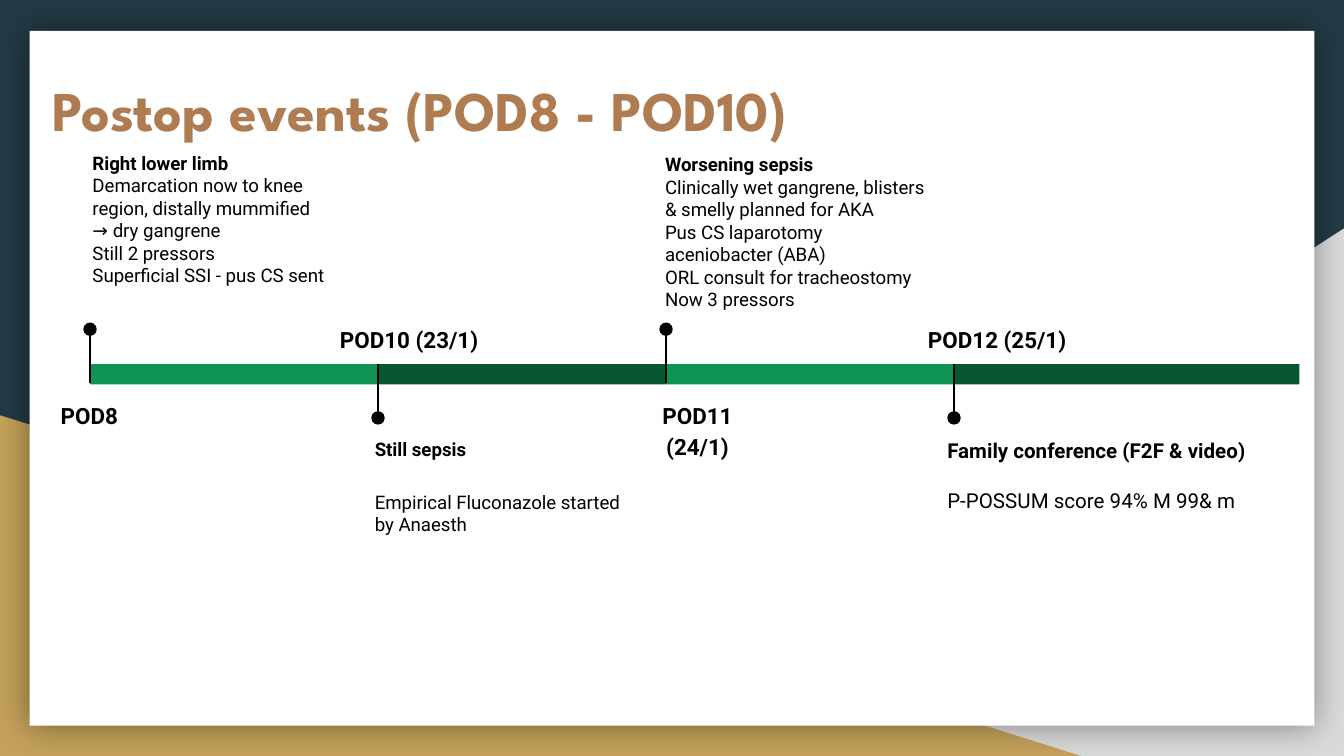
from lxml import etree
from pptx import Presentation
from pptx.dml.color import RGBColor
from pptx.enum.shapes import MSO_CONNECTOR, MSO_SHAPE
from pptx.enum.text import MSO_ANCHOR, MSO_AUTO_SIZE, PP_ALIGN
from pptx.oxml import parse_xml
from pptx.oxml.ns import nsdecls, qn
from pptx.util import Inches, Pt

COLORS = {
    "navy": "233A44", "grey": "D9D9D9", "gold": "C4A15A", "white": "FFFFFF",
    "title": "AF7B51", "green": "0E9453", "dark": "085631", "black": "000000",
}
START, STEP, BAR_TOP, BAR_H, DOT = 0.67, 2.143, 2.71, 0.15, 0.1
EVENTS = [
    {"label": "POD8", "label_box": (0.19, 2.86, 0.95, 0.41),
     "head": "Right lower limb", "box": (0.59, 1.03, 2.14, 1.27), "size": 10, "gap": 0,
     "body": "Demarcation now to knee region, distally mummified\n→ dry gangrene\n"
             "Still 2 pressors\nSuperficial SSI - pus CS sent"},
    {"label": "POD10 (23/1)", "label_box": (2.41, 2.3, 1.27, 0.41),
     "head": "Still sepsis", "box": (2.69, 3.16, 2.08, 1.03), "size": 10, "gap": 16,
     "body": "Empirical Fluconazole started by Anaesth"},
    {"label": "POD11 (24/1)", "label_box": (4.6, 2.86, 1.18, 0.41),
     "head": "Worsening sepsis", "box": (4.85, 1.04, 2.14, 1.82), "size": 10, "gap": 0,
     "body": "Clinically wet gangrene, blisters & smelly planned for AKA\n"
             "Pus CS laparotomy aceniobacter (ABA)\n"
             "ORL consult for tracheostomy\nNow 3 pressors"},
    {"label": "POD12 (25/1)", "label_box": (6.69, 2.3, 1.46, 0.41),
     "head": "Family conference (F2F & video)", "box": (6.95, 3.16, 2.46, 1.03),
     "size": 11, "gap": 13.5, "body": "P-POSSUM score 94% M 99& m"},
]


def rgb(name):
    """Return the named colour."""
    return RGBColor.from_string(COLORS[name])


def add_block(s, kind, box, color):
    """Add a filled shape without outline or shadow."""
    sp = s.shapes.add_shape(kind, *map(Inches, box))
    sp.shadow.inherit = False
    sp.fill.solid()
    sp.fill.fore_color.rgb = rgb(color)
    sp.line.fill.background()
    return sp


def style_frame(tf):
    """Give a text frame even insets, wrapping and a top anchor."""
    tf.word_wrap = True
    tf.auto_size = MSO_AUTO_SIZE.NONE
    tf.vertical_anchor = MSO_ANCHOR.TOP
    tf.margin_left = tf.margin_right = tf.margin_top = tf.margin_bottom = Inches(0.1)


def style_font(p, name, size, color, bold):
    """Set the font of a paragraph."""
    p.font.name, p.font.size, p.font.bold = name, Pt(size), bold
    p.font.color.rgb = rgb(color)


def add_text(s, box, size, head, body=None, gap=0):
    """Add a text box with a bold line and an optional plain paragraph."""
    tf = s.shapes.add_textbox(*map(Inches, box)).text_frame
    style_frame(tf)
    p = tf.paragraphs[0]
    p.text = head
    style_font(p, "Roboto", size, "black", True)
    if body:
        p = tf.add_paragraph()
        p.text = body
        p.space_before = Pt(gap)
        style_font(p, "Roboto", size, "black", False)
    return tf


def add_backdrop(s):
    """Draw the coloured corners and the white card with its soft shadow."""
    s.background.fill.solid()
    s.background.fill.fore_color.rgb = rgb("navy")
    corner = add_block(s, MSO_SHAPE.RIGHT_TRIANGLE, (3.92, 1.7, 6.08, 3.93), "grey")
    corner._element.spPr.find(qn("a:xfrm")).set("flipH", "1")
    add_block(s, MSO_SHAPE.RIGHT_TRIANGLE, (0, 3.09, 8.06, 2.54), "gold")
    card = add_block(s, MSO_SHAPE.RECTANGLE, (0.22, 0.23, 9.56, 5.17), "white")
    card._element.spPr.find(qn("a:effectLst")).append(parse_xml(
        f'<a:outerShdw {nsdecls("a")} blurRad="{Pt(18)}" dist="0" algn="ctr" rotWithShape="0">'
        f'<a:srgbClr val="{COLORS["black"]}"><a:alpha val="40000"/></a:srgbClr></a:outerShdw>'))


def add_title(s, text):
    """Place the title above the card and its events."""
    title = s.shapes.title
    title.left, title.top, title.width, title.height = map(Inches, (0.29, 0.46, 8.21, 1.04))
    tf = title.text_frame
    style_frame(tf)
    p = tf.paragraphs[0]
    p.text = text
    p.alignment = PP_ALIGN.LEFT
    p.line_spacing = 1.0
    p.space_before = Pt(0)
    style_font(p, "League Spartan", 30, "title", True)
    tree = s.shapes._spTree
    tree.remove(title._element)
    tree.append(title._element)


def add_pin(s, x, above):
    """Add a marker line across the bar that ends in a dot."""
    start, end = (2.46, 2.85) if above else (3.1, BAR_TOP)
    line = s.shapes.add_connector(
        MSO_CONNECTOR.STRAIGHT, Inches(x), Inches(start), Inches(x), Inches(end))
    line.line.color.rgb = rgb("black")
    line.line.width = Pt(0.75)
    etree.SubElement(line._element.spPr, qn("a:effectLst"))
    dot_top = 2.4 if above else 3.06
    add_block(s, MSO_SHAPE.OVAL, (x - DOT / 2, dot_top, DOT, DOT), "black")


def add_event(s, i, event):
    """Add the pin, date label and notes of one event."""
    add_pin(s, START + i * STEP, i % 2 == 0)
    p = add_text(s, event["label_box"], 12, event["label"]).paragraphs[0]
    p.alignment = PP_ALIGN.CENTER
    p.line_spacing = 1.15
    add_text(s, event["box"], event["size"], event["head"], event["body"], event["gap"])


def main():
    """Build the timeline slide."""
    prs = Presentation()
    prs.slide_width = Inches(10)
    prs.slide_height = prs.slide_width * 9 // 16
    s = prs.slides.add_slide(prs.slide_layouts[5])
    add_backdrop(s)
    add_title(s, "Postop events (POD8 - POD10)")
    for i in range(len(EVENTS)):
        width = 2.57 if i == len(EVENTS) - 1 else STEP
        add_block(s, MSO_SHAPE.RECTANGLE, (START + i * STEP, BAR_TOP, width, BAR_H),
                  "dark" if i % 2 else "green")
    for i, event in enumerate(EVENTS):
        add_event(s, i, event)
    prs.save("out.pptx")


if __name__ == "__main__":
    main()
